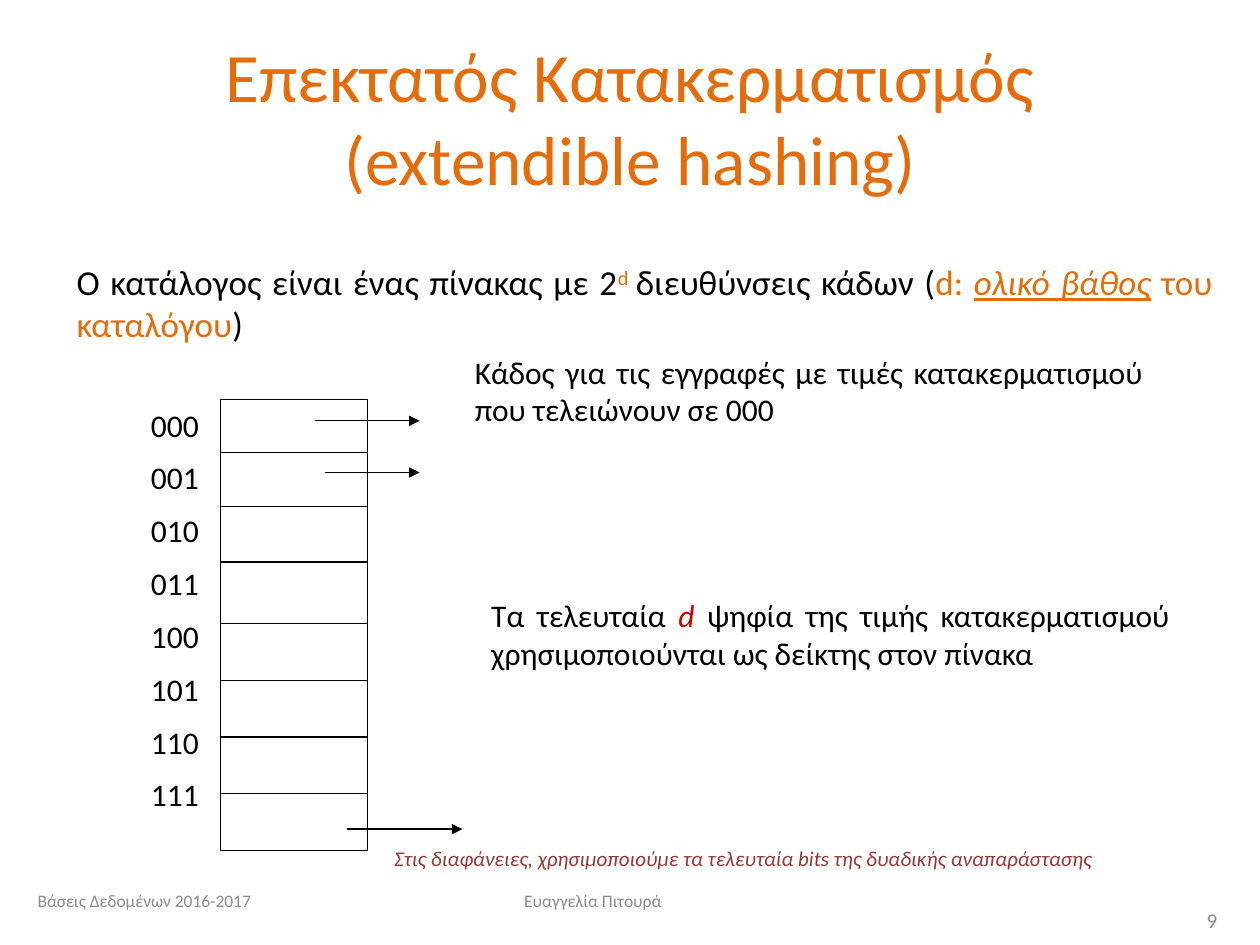
"""Builds the slide on the directory of extendible hashing."""
from lxml import etree
from pptx import Presentation
from pptx.dml.color import RGBColor
from pptx.enum.shapes import MSO_CONNECTOR, MSO_SHAPE
from pptx.enum.text import MSO_ANCHOR, PP_ALIGN
from pptx.oxml.ns import qn
from pptx.util import Inches, Pt

LEFT, CENTER, RIGHT, JUSTIFY = PP_ALIGN.LEFT, PP_ALIGN.CENTER, PP_ALIGN.RIGHT, PP_ALIGN.JUSTIFY
TOP, MIDDLE = MSO_ANCHOR.TOP, MSO_ANCHOR.MIDDLE
STRAIGHT, RECTANGLE = MSO_CONNECTOR.STRAIGHT, MSO_SHAPE.RECTANGLE
BLACK = RGBColor(0x00, 0x00, 0x00)
WHITE = RGBColor(0xFF, 0xFF, 0xFF)
ORANGE = RGBColor(0xE4, 0x6C, 0x0A)
RED = RGBColor(0xCC, 0x00, 0x00)
MAROON = RGBColor(0x95, 0x37, 0x35)
GRAY = RGBColor(0x8C, 0x8C, 0x8C)
FONT = "Calibri"

TITLE = [("Επεκτατός Κατακερματισμός (extendible hashing)", ORANGE, "")]
DEFINITION = [
    ("Ο κατάλογος είναι ένας πίνακας με 2", BLACK, ""),
    ("d ", ORANGE, "superscript"),
    ("διευθύνσεις κάδων (", BLACK, ""),
    ("d: ", ORANGE, ""),
    ("ολικό βάθος", ORANGE, "italic underline"),
    (" του καταλόγου", ORANGE, ""),
    (")", BLACK, ""),
]
BUCKET = [("Κάδος για τις εγγραφές με τιμές κατακερματισμού που τελειώνουν σε 000", BLACK, "")]
INDEX = [
    ("Τα τελευταία ", BLACK, ""),
    ("d ", RED, "italic"),
    ("ψηφία της τιμής κατακερματισμού χρησιμοποιούνται ως δείκτης στον πίνακα", BLACK, ""),
]
REMARK = [("Στις διαφάνειες, χρησιμοποιούμε τα τελευταία bits της δυαδικής αναπαράστασης",
           MAROON, "italic")]
COURSE = [("Βάσεις Δεδομένων 2016-2017", GRAY, "")]
AUTHOR = [("Ευαγγελία Πιτουρά", GRAY, "")]
NUMBER = [("9", GRAY, "")]
DEPTH = 3
LABELS = [[(f"{i:0{DEPTH}b}", BLACK, "")] for i in range(2 ** DEPTH)]

TEXTS = [
    ((0.5, 0.3, 9, 1.25), [TITLE], 39.6, CENTER, MIDDLE),
    ((0.51, 2.02, 9.21, 0.77), [DEFINITION], 20, JUSTIFY, TOP),
    ((1.1, 3.17, 7.67, 3.56), LABELS, 18, LEFT, TOP),
    ((3.67, 2.75, 5.5, 0.77), [BUCKET], 18, JUSTIFY, TOP),
    ((3.8, 4.68, 5.58, 0.71), [INDEX], 18, JUSTIFY, TOP),
    ((3.03, 6.66, 6.65, 0.3), [REMARK], 12, JUSTIFY, TOP),
    ((0.2, 6.95, 2.33, 0.4), [COURSE], 10, LEFT, MIDDLE),
    ((3.12, 6.95, 3.17, 0.4), [AUTHOR], 10, CENTER, MIDDLE),
    ((7.43, 7.1, 2.33, 0.4), [NUMBER], 12, RIGHT, MIDDLE),
]
DIRECTORY = (1.75, 3.17, 1.17, 3.58)
DIVIDERS = (3.59, 4.02, 4.46, 4.95, 5.4, 5.85, 6.3)
POINTERS = [(2.5, 3.33, 3.34), (2.58, 3.33, 3.75), (2.75, 3.67, 6.58)]


def add_text(s, box, paragraphs, size, align, anchor):
    tf = s.shapes.add_textbox(*map(Inches, box)).text_frame
    tf.word_wrap = True
    tf.vertical_anchor = anchor
    for i, runs in enumerate(paragraphs):
        p = tf.add_paragraph() if i else tf.paragraphs[0]
        p.alignment = align
        if i:
            p.space_before = Pt(8.6)
        for text, color, style in runs:
            r = p.add_run()
            r.text = text
            r.font.name = FONT
            r.font.size = Pt(size)
            r.font.color.rgb = color
            if "italic" in style:
                r.font.italic = True
            if "underline" in style:
                r.font.underline = True
            if "superscript" in style:
                r.font._element.set("baseline", "30000")


def add_line(s, x1, x2, y, arrow=False):
    line = s.shapes.add_connector(STRAIGHT, Inches(x1), Inches(y), Inches(x2), Inches(y))
    line.line.color.rgb = BLACK
    line.line.width = Pt(0.75)
    if arrow:
        etree.SubElement(line.line._get_or_add_ln(), qn("a:tailEnd"), type="triangle")
    etree.SubElement(line._element.spPr, qn("a:effectLst"))


def add_directory(s):
    left, _, width, _ = DIRECTORY
    table = s.shapes.add_shape(RECTANGLE, *map(Inches, DIRECTORY))
    table.shadow.inherit = False
    table.fill.solid()
    table.fill.fore_color.rgb = WHITE
    table.line.color.rgb = BLACK
    table.line.width = Pt(0.75)
    for y in DIVIDERS:
        add_line(s, left, left + width, y)
    for x1, x2, y in POINTERS:
        add_line(s, x1, x2, y, arrow=True)


def main():
    prs = Presentation()
    prs.slide_width, prs.slide_height = Inches(10), Inches(7.5)
    s = prs.slides.add_slide(prs.slide_layouts[6])
    add_directory(s)
    for text in TEXTS:
        add_text(s, *text)
    prs.save("out.pptx")


if __name__ == "__main__":
    main()
